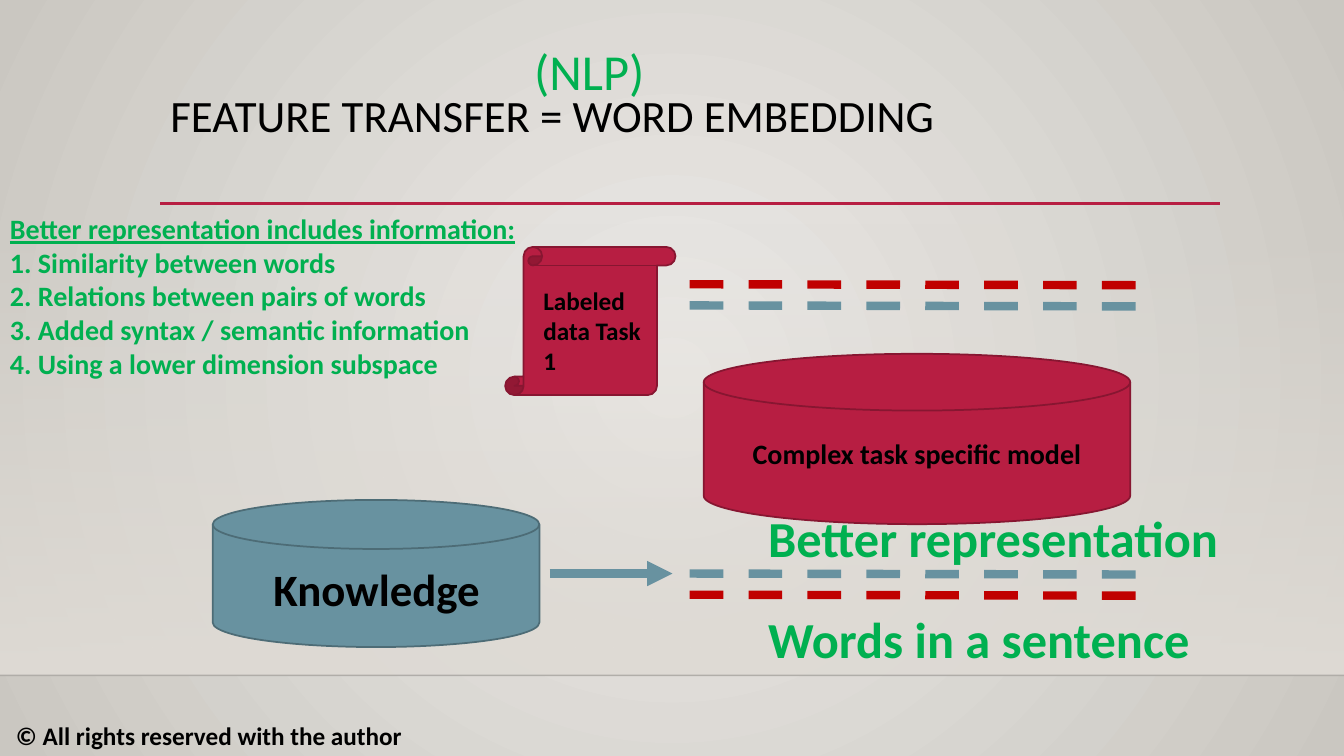
from lxml import etree
from pptx import Presentation
from pptx.dml.color import RGBColor
from pptx.enum.dml import MSO_LINE
from pptx.enum.shapes import MSO_CONNECTOR, MSO_SHAPE
from pptx.enum.text import MSO_ANCHOR, MSO_AUTO_SIZE, PP_ALIGN
from pptx.oxml.ns import qn
from pptx.util import Inches, Pt

BLACK = RGBColor(0x00, 0x00, 0x00)
GREEN = RGBColor(0x00, 0xB0, 0x50)
RED = RGBColor(0xC0, 0x00, 0x00)
CRIMSON = RGBColor(0xB7, 0x1E, 0x42)
DARK_CRIMSON = RGBColor(0x87, 0x16, 0x31)
BLUE = RGBColor(0x68, 0x92, 0xA0)
DARK_BLUE = RGBColor(0x4D, 0x6C, 0x76)
SAND = RGBColor(0xDF, 0xDB, 0xD5)
PALE_SAND = RGBColor(0xEC, 0xEA, 0xE7)
DEEP_SAND = RGBColor(0xCA, 0xC7, 0xC1)

FONT = "Calibri"
WIDTH, HEIGHT = 13.33, 7.5
FLOOR = 6.7
BENEFITS = [
    "1. Similarity between words",
    "2. Relations between pairs of words",
    "3. Added syntax / semantic information",
    "4. Using a lower dimension subspace",
]


def sub(parent, tag, **attributes):
    return etree.SubElement(parent, qn(tag), attributes)


def set_gradient(gradient, start, end, start_alpha=100, radial=False):
    """Fill a gradFill element with two stops, running down or out from the centre."""
    for child in list(gradient):
        gradient.remove(child)
    stops = sub(gradient, "a:gsLst")
    for position, color, alpha in ((0, start, start_alpha), (100, end, 100)):
        stop = sub(stops, "a:gs", pos=str(position * 1000))
        set_alpha(sub(stop, "a:srgbClr", val=str(color)), alpha)
    if radial:
        circle = sub(gradient, "a:path", path="circle")
        sub(circle, "a:fillToRect", l="50000", t="50000", r="50000", b="50000")
    else:
        sub(gradient, "a:lin", ang="5400000", scaled="0")


def set_alpha(color_element, percent):
    if percent < 100:
        sub(color_element, "a:alpha", val=str(percent * 1000))


def add_run(paragraph, text, size, color, bold=False, underline=False):
    run = paragraph.add_run()
    run.text = text
    run.font.name, run.font.size = FONT, Pt(size)
    run.font.bold, run.font.underline = bold, underline
    run.font.color.rgb = color


def place(shape, left, top, width, height):
    shape.left, shape.top = Inches(left), Inches(top)
    shape.width, shape.height = Inches(width), Inches(height)


def add_text(slide, box, lines, size, color=BLACK, bold=True,
             align=PP_ALIGN.LEFT, underline_first=False):
    frame = slide.shapes.add_textbox(*map(Inches, box)).text_frame
    frame.word_wrap = True
    for index, line in enumerate(lines):
        paragraph = frame.add_paragraph() if index else frame.paragraphs[0]
        paragraph.alignment = align
        add_run(paragraph, line, size, color, bold, underline_first and index == 0)


def add_line(slide, start, end, color, width, dashed=False, arrow=False, alpha=100):
    connector = slide.shapes.add_connector(
        MSO_CONNECTOR.STRAIGHT, *map(Inches, (*start, *end)))
    line = connector.line
    line.color.rgb, line.width = color, Pt(width)
    properties = connector.element.spPr
    set_alpha(properties.find(".//" + qn("a:srgbClr")), alpha)
    if dashed:
        line.dash_style = MSO_LINE.DASH
    if arrow:
        sub(properties.find(qn("a:ln")), "a:tailEnd", type="triangle")
    sub(properties, "a:effectLst")


def add_solid(slide, preset, box, fill, outline):
    shape = slide.shapes.add_shape(preset, *map(Inches, box))
    shape.shadow.inherit = False
    shape.fill.solid()
    shape.fill.fore_color.rgb = fill
    shape.line.color.rgb, shape.line.width = outline, Pt(1.25)
    return shape


def add_backdrop(slide):
    slide.background.fill.gradient()
    set_gradient(slide.element.find(".//" + qn("a:gradFill")),
                 PALE_SAND, DEEP_SAND, radial=True)
    wall = slide.shapes.add_shape(
        MSO_SHAPE.RECTANGLE, *map(Inches, (0, 2.21, WIDTH, FLOOR - 2.21)))
    wall.shadow.inherit = False
    wall.line.fill.background()
    wall.fill.gradient()
    set_gradient(wall.element.spPr.find(qn("a:gradFill")), SAND, SAND, start_alpha=0)
    add_line(slide, (0, FLOOR), (WIDTH, FLOOR), BLACK, 1, alpha=20)
    add_line(slide, (1.59, 2.02), (12.1, 2.02), CRIMSON, 2.5)


def add_title(slide, text):
    title = slide.shapes.title
    place(title, 1.59, 0.88, 10.5, 1.15)
    frame = title.text_frame
    frame.auto_size = MSO_AUTO_SIZE.NONE
    frame.vertical_anchor = MSO_ANCHOR.TOP
    paragraph = frame.paragraphs[0]
    paragraph.alignment, paragraph.line_spacing = PP_ALIGN.LEFT, 0.9
    add_run(paragraph, text, 32, BLACK)


def add_model(slide):
    model = add_solid(slide, MSO_SHAPE.FLOWCHART_MAGNETIC_DISK,
                      (6.98, 3.51, 4.23, 1.69), CRIMSON, DARK_CRIMSON)
    frame = model.text_frame
    frame.word_wrap = True
    frame.vertical_anchor = MSO_ANCHOR.MIDDLE
    frame.paragraphs[0].alignment = PP_ALIGN.CENTER
    add_run(frame.paragraphs[0], "Complex task specific model", 20, BLACK, bold=True)


def main():
    presentation = Presentation()
    presentation.slide_width = Inches(WIDTH)
    presentation.slide_height = Inches(HEIGHT)
    slide = presentation.slides.add_slide(presentation.slide_layouts[5])

    add_backdrop(slide)
    add_title(slide, "FEATURE TRANSFER = WORD EMBEDDING")
    add_text(slide, (5.13, 0.35, 1.43, 0.71), ["(NLP)"], 36, GREEN,
             bold=False, align=PP_ALIGN.CENTER)

    add_model(slide)
    for top, color in ((2.82, RED), (3.03, BLUE), (5.69, BLUE), (5.9, RED)):
        add_line(slide, (6.84, top), (11.46, top + 0.01), color, 6, dashed=True)
    add_line(slide, (5.45, 5.69), (6.67, 5.69), BLUE, 6, arrow=True)

    add_solid(slide, MSO_SHAPE.FLOWCHART_MAGNETIC_DISK,
              (2.11, 4.96, 3.24, 1.46), BLUE, DARK_BLUE)
    add_text(slide, (2.34, 5.52, 2.79, 0.64), ["Knowledge"], 32, align=PP_ALIGN.CENTER)
    add_solid(slide, MSO_SHAPE.VERTICAL_SCROLL,
              (5.01, 2.45, 1.69, 1.47), CRIMSON, DARK_CRIMSON)
    add_text(slide, (5.29, 2.78, 1.19, 1.01), ["Labeled data Task 1"], 18)

    add_text(slide, (0, 2.05, 5.95, 1.78),
             ["Better representation includes information:", *BENEFITS],
             20, GREEN, underline_first=True)
    for top, label in ((4.98, "Better representation"), (5.98, "Words in a sentence")):
        add_text(slide, (7.52, top, 5.58, 0.71), [label], 36, GREEN)
    add_text(slide, (0.06, 7.1, 4.52, 0.4), ["© All rights reserved with the author"], 18)

    presentation.save("out.pptx")


if __name__ == "__main__":
    main()
